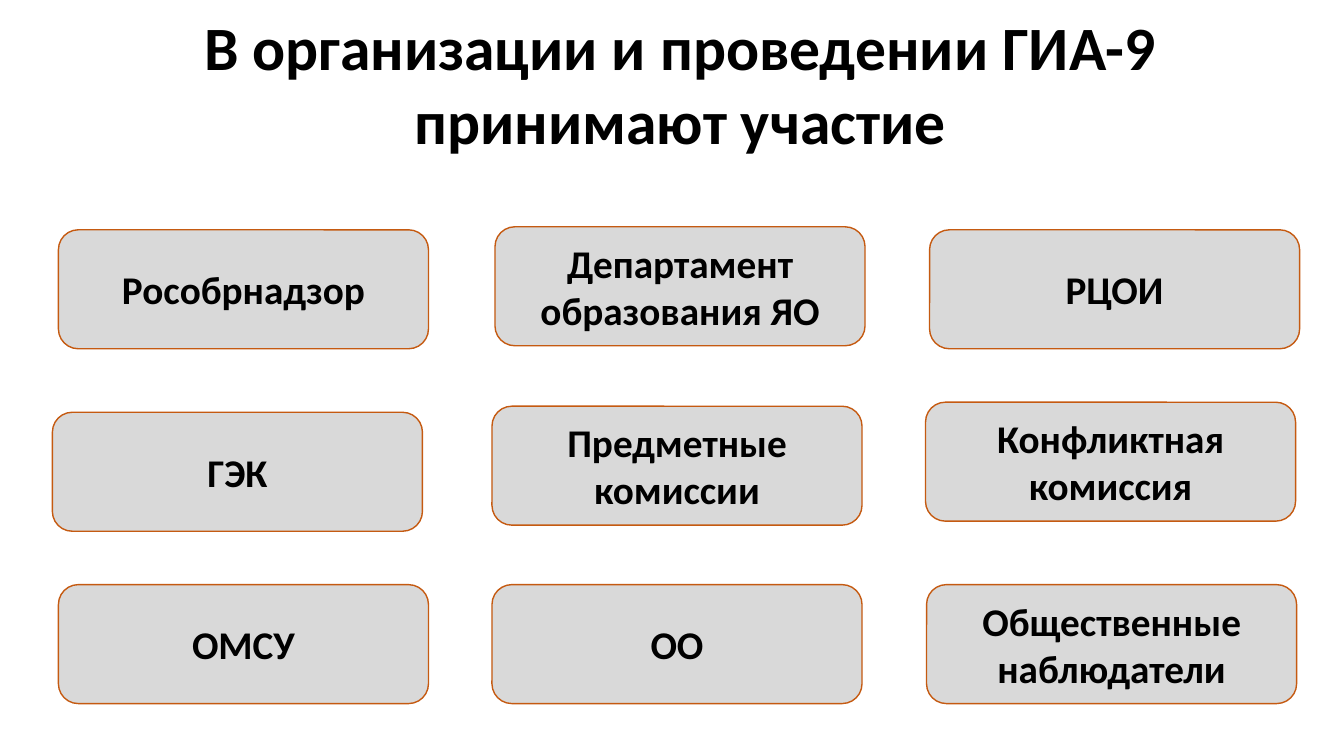
from pptx import Presentation
from pptx.dml.color import RGBColor
from pptx.enum.shapes import MSO_SHAPE as Shape
from pptx.enum.text import MSO_ANCHOR as Anchor, MSO_AUTO_SIZE as Fit, PP_ALIGN as Align
from pptx.util import Inches, Pt

BLACK = RGBColor(0x00, 0x00, 0x00)
GREY = RGBColor(0xD9, 0xD9, 0xD9)
RUST = RGBColor(0xC5, 0x5A, 0x11)

BOX_W, BOX_H = 3.67, 1.18

TITLE = ["В организации и проведении ГИА-9", "принимают участие"]

# Label, left, top of each participant
BOXES = [
    ("Рособрнадзор", 0.58, 2.28),
    ("Департамент образования ЯО", 4.91, 2.25),
    ("РЦОИ", 9.22, 2.28),
    ("ГЭК", 0.52, 4.09),
    ("Предметные комиссии", 4.88, 4.03),
    ("Конфликтная комиссия", 9.18, 3.99),
    ("ОМСУ", 0.58, 5.8),
    ("ОО", 4.88, 5.8),
    ("Общественные наблюдатели", 9.19, 5.8),
]


class Page:
    """Holds the slide and its text style."""

    font = "Calibri"

    def __init__(self, deck):
        self.slide = deck.slides.add_slide(deck.slide_layouts[5])

    def label(self, frame, lines, size):
        frame.word_wrap = True
        frame.auto_size = Fit.NONE
        frame.vertical_anchor = Anchor.MIDDLE
        for i, line in enumerate(lines):
            para = frame.add_paragraph() if i else frame.paragraphs[0]
            para.alignment = Align.CENTER
            run = para.add_run()
            run.text = line
            run.font.name = self.font
            run.font.size = Pt(size)
            run.font.bold = True
            run.font.color.rgb = BLACK

    def title(self, lines, left, top, width, height):
        head = self.slide.shapes.title
        head.left, head.top = Inches(left), Inches(top)
        head.width, head.height = Inches(width), Inches(height)
        self.label(head.text_frame, lines, 44)

    def box(self, text, left, top):
        box = self.slide.shapes.add_shape(
            Shape.ROUNDED_RECTANGLE,
            Inches(left), Inches(top), Inches(BOX_W), Inches(BOX_H))
        box.shadow.inherit = False
        box.fill.solid()
        box.fill.fore_color.rgb = GREY
        box.line.color.rgb = RUST
        box.line.width = Pt(1)
        self.label(box.text_frame, [text], 28)


def main():
    deck = Presentation()
    deck.slide_width, deck.slide_height = Inches(13.33), Inches(7.5)
    page = Page(deck)

    # Heading
    page.title(TITLE, 1.92, 0.19, 9.66, 1.26)

    # Participants
    for text, left, top in BOXES:
        page.box(text, left, top)

    deck.save("out.pptx")


if __name__ == "__main__":
    main()
